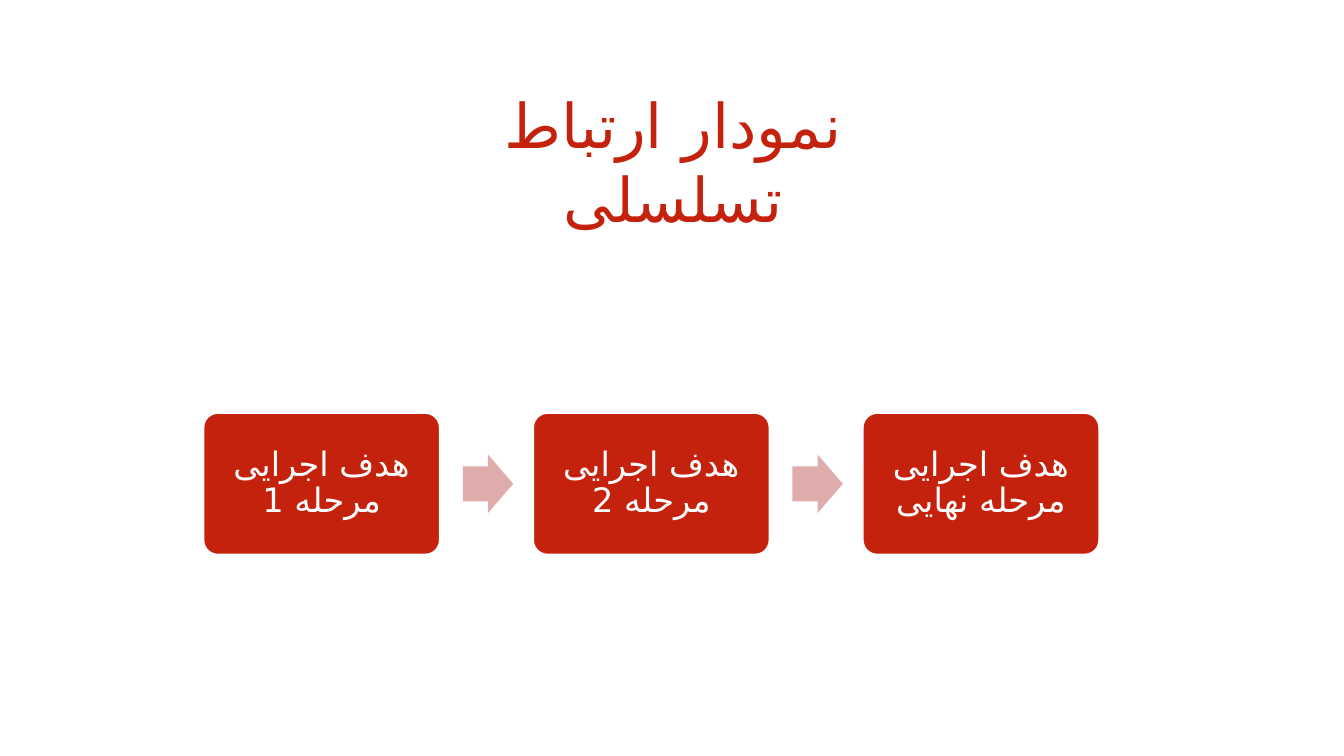
from dataclasses import dataclass

from pptx import Presentation
from pptx.dml.color import RGBColor
from pptx.enum.shapes import MSO_SHAPE
from pptx.enum.text import MSO_ANCHOR, MSO_AUTO_SIZE, PP_ALIGN
from pptx.oxml.xmlchemy import OxmlElement
from pptx.util import Inches, Pt

BOX, ARROW = MSO_SHAPE.ROUNDED_RECTANGLE, MSO_SHAPE.RIGHT_ARROW
TOP, MIDDLE = MSO_ANCHOR.TOP, MSO_ANCHOR.MIDDLE
GROW, CENTER = MSO_AUTO_SIZE.SHAPE_TO_FIT_TEXT, PP_ALIGN.CENTER


@dataclass
class Theme:
    font: str = "League Spartan"
    script: str = "DejaVu Sans"
    red: RGBColor = RGBColor(0xC4, 0x22, 0x0D)
    pink: RGBColor = RGBColor(0xDE, 0xAC, 0xAB)
    white: RGBColor = RGBColor(0xFF, 0xFF, 0xFF)
    title: Pt = Pt(44)
    label: Pt = Pt(24)


theme = Theme()


def write(frame, text, size, color):
    """Put one centred right-to-left paragraph in a text frame."""
    frame.word_wrap = True
    para = frame.paragraphs[0]
    para.text = text
    para.alignment = CENTER
    props = para._p.get_or_add_pPr()
    props.set("rtl", "1")
    font = para.font
    font.name, font.size = theme.font, size
    font.color.rgb = color
    # Arabic letters take the complex-script typeface
    script = OxmlElement("a:cs")
    script.set("typeface", theme.script)
    font._element.append(script)
    return para


def draw(kind, left, top, width, height, fill):
    """Add a flat filled shape without shadow, measured in inches."""
    shape = slide.shapes.add_shape(
        kind, Inches(left), Inches(top), Inches(width), Inches(height))
    shape.shadow.inherit = False
    shape.fill.solid()
    shape.fill.fore_color.rgb = fill
    return shape


# Slide
deck = Presentation()
deck.slide_width, deck.slide_height = Inches(13.33), Inches(7.5)
slide = deck.slides.add_slide(deck.slide_layouts[5])

# Title
title = slide.shapes.title
title.left, title.top = Inches(4.21), Inches(0.81)
title.width, title.height = Inches(4.94), Inches(0.84)
write(title.text_frame, "نمودار ارتباط تسلسلی", theme.title, theme.red)
title.text_frame.vertical_anchor = TOP
title.text_frame.auto_size = GROW

# Chain of steps, with an arrow before each step but the first
steps = ["هدف اجرایی مرحله 1", "هدف اجرایی مرحله 2", "هدف اجرایی مرحله نهایی"]
start, pitch = 2.02, 3.27
for i, step in enumerate(steps):
    left = start + i * pitch
    if i:
        arrow = draw(ARROW, left - 0.7, 4.51, 0.5, 0.58, theme.pink)
        arrow.line.fill.background()
        arrow.adjustments[0] = 0.6
        arrow.adjustments[1] = 0.5
    box = draw(BOX, left, 4.1, 2.34, 1.4, theme.red)
    box.adjustments[0] = 0.1
    box.line.color.rgb = theme.white
    box.line.width = Pt(1)
    frame = box.text_frame
    frame.vertical_anchor = MIDDLE
    frame.margin_left = frame.margin_right = Inches(0.1)
    frame.margin_top = frame.margin_bottom = Inches(0.1)
    write(frame, step, theme.label, theme.white).line_spacing = 0.9

deck.save("out.pptx")
